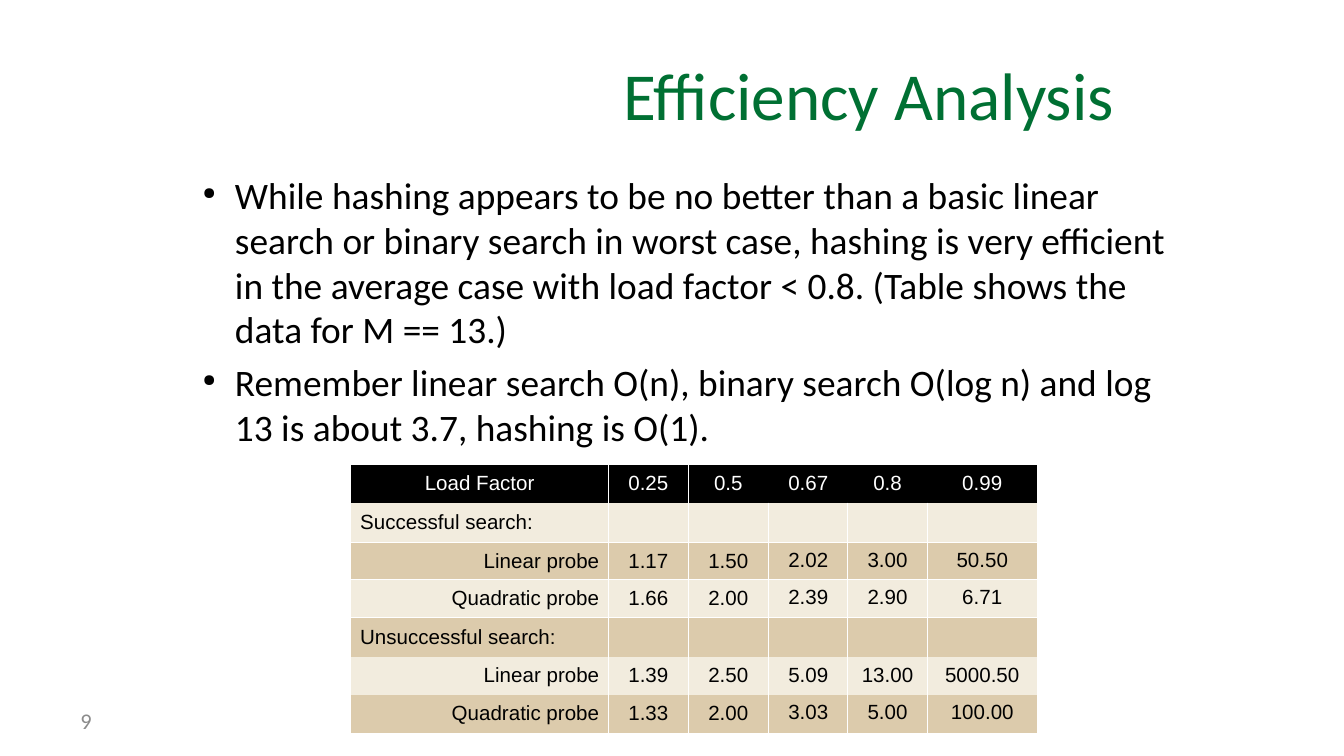
from lxml import etree
from pptx import Presentation
from pptx.dml.color import RGBColor
from pptx.enum.text import MSO_ANCHOR, PP_ALIGN
from pptx.oxml.ns import qn
from pptx.util import Emu, Inches, Pt

LEFT, CENTER, RIGHT = PP_ALIGN.LEFT, PP_ALIGN.CENTER, PP_ALIGN.RIGHT
TOP, MIDDLE = MSO_ANCHOR.TOP, MSO_ANCHOR.MIDDLE
PLAIN_STYLE = "{2D5ABB26-0587-4C30-8999-92F81FD0307C}"

TITLE = "Efficiency Analysis"
POINTS = [
    "While hashing appears to be no better than a basic linear search or binary "
    "search in worst case, hashing is very efficient in the average case with "
    "load factor < 0.8. (Table shows the data for M == 13.)",
    "Remember linear search O(n), binary search O(log n) and log 13 is about 3.7, "
    "hashing is O(1).",
]
PROBES = [
    ["Load Factor", "0.25", "0.5", "0.67", "0.8", "0.99"],
    ["Successful search:"],
    ["Linear probe", "1.17", "1.50", "2.02", "3.00", "50.50"],
    ["Quadratic probe", "1.66", "2.00", "2.39", "2.90", "6.71"],
    ["Unsuccessful search:"],
    ["Linear probe", "1.39", "2.50", "5.09", "13.00", "5000.50"],
    ["Quadratic probe", "1.33", "2.00", "3.03", "5.00", "100.00"],
]
PROBE_COLUMNS = [19.2, 5.9, 6, 5.9, 5.9, 8.2]


def color(code):
    """Turn a hex string into a colour."""
    return RGBColor.from_string(code)


def write(frame, lines, size, ink, font="Calibri", align=LEFT, spacing=None,
          gap=0, bullet=False):
    """Fill a text frame with one paragraph per line."""
    for index, line in enumerate(lines):
        paragraph = frame.paragraphs[0] if index == 0 else frame.add_paragraph()
        paragraph.alignment = align
        if spacing:
            paragraph.line_spacing = spacing
        if index:
            paragraph.space_before = Pt(gap)
        if bullet:
            properties = paragraph._p.get_or_add_pPr()
            properties.set("marL", str(Inches(0.32)))
            properties.set("indent", str(Inches(-0.24)))
            etree.SubElement(properties, qn("a:buSzPct"), val="45000")
            etree.SubElement(properties, qn("a:buChar"), char="●")
        if line:
            run = paragraph.add_run()
            run.text = line
            run.font.size, run.font.name = Pt(size), font
            run.font.color.rgb = color(ink)
        else:
            etree.SubElement(paragraph._p, qn("a:endParaRPr"), sz=str(size * 100))


class Deck:
    """Holds the style and the current slide on a grid of 100 by 100."""

    green, black, white, gray = "007033", "000000", "FFFFFF", "8C8C8C"
    bands = ["DCCBAC", "F2ECDE"]

    def __init__(self):
        """Open a deck with one blank slide."""
        self.deck = Presentation()
        self.deck.slide_width, self.deck.slide_height = Inches(10), Inches(5.625)
        self.slide = self.deck.slides.add_slide(self.deck.slide_layouts[6])

    def across(self, columns):
        """Measure grid columns."""
        return Emu(int(self.deck.slide_width * columns / 100))

    def down(self, rows):
        """Measure grid rows."""
        return Emu(int(self.deck.slide_height * rows / 100))

    def text(self, place, lines, anchor=TOP, **style):
        """Add a wrapped text box."""
        left, top, width, height = place
        frame = self.slide.shapes.add_textbox(
            self.across(left), self.down(top), self.across(width), self.down(height)
        ).text_frame
        frame.word_wrap, frame.vertical_anchor = True, anchor
        write(frame, lines, **style)

    def border(self, cell, sides):
        """Draw thin white lines on the named sides of a cell."""
        properties = cell._tc.get_or_add_tcPr()
        for side in sides:
            line = etree.SubElement(properties, qn(f"a:ln{side}"), w=str(Pt(0.57)))
            fill = etree.SubElement(line, qn("a:solidFill"))
            etree.SubElement(fill, qn("a:srgbClr"), val=self.white)

    def table(self, left, top, columns, row_height, rows):
        """Add the banded table of probe counts."""
        table = self.slide.shapes.add_table(
            len(rows), len(columns), self.across(left), self.down(top),
            self.across(sum(columns)), self.down(row_height * len(rows))
        ).table
        table._tbl.tblPr.find(qn("a:tableStyleId")).text = PLAIN_STYLE
        for column, width in zip(table.columns, columns):
            column.width = self.across(width)
        for r, values in enumerate(rows):
            table.rows[r].height = self.down(row_height)
            padded = values + [""] * (len(columns) - len(values))
            for c, value in enumerate(padded):
                self.cell(table.cell(r, c), r, c, value, len(values) == 1)

    def cell(self, cell, row, column, value, is_group):
        """Style and fill one table cell."""
        sides = ["L"] if column and (row or column == 1) else []
        if column < len(PROBE_COLUMNS) - 1 and (row or column == 0):
            sides.append("R")
        sides += ["T"] if row in (2, 3) else []
        sides += ["B"] if row in (1, 2) else []
        self.border(cell, sides)
        cell.fill.solid()
        cell.fill.fore_color.rgb = color(self.bands[row % 2] if row else self.black)
        cell.margin_left = cell.margin_right = Inches(0.07)
        cell.margin_top, cell.margin_bottom = Inches(0.06), Inches(0.05)
        cell.vertical_anchor = TOP if row and (column > 2 or row == 5) else MIDDLE
        label_align = LEFT if is_group else RIGHT
        write(cell.text_frame, [value], size=11, font="Arial", spacing=0.93,
              ink=self.black if row else self.white,
              align=CENTER if column or not row else label_align)


def main():
    """Build and save the slide."""
    deck = Deck()
    deck.text((5, 92.7, 23.3, 5.3), ["9"], anchor=MIDDLE, size=12, ink=deck.gray)
    deck.text((16.2, 4.1, 67.7, 16.7), [TITLE], anchor=MIDDLE, size=36,
              ink=deck.green, align=RIGHT)
    deck.text((13.3, 21.9, 76.8, 66), POINTS, size=20, ink=deck.black,
              gap=4, bullet=True)
    deck.table(26.1, 61.5, PROBE_COLUMNS, 4.84, PROBES)
    deck.deck.save("out.pptx")


if __name__ == "__main__":
    main()
